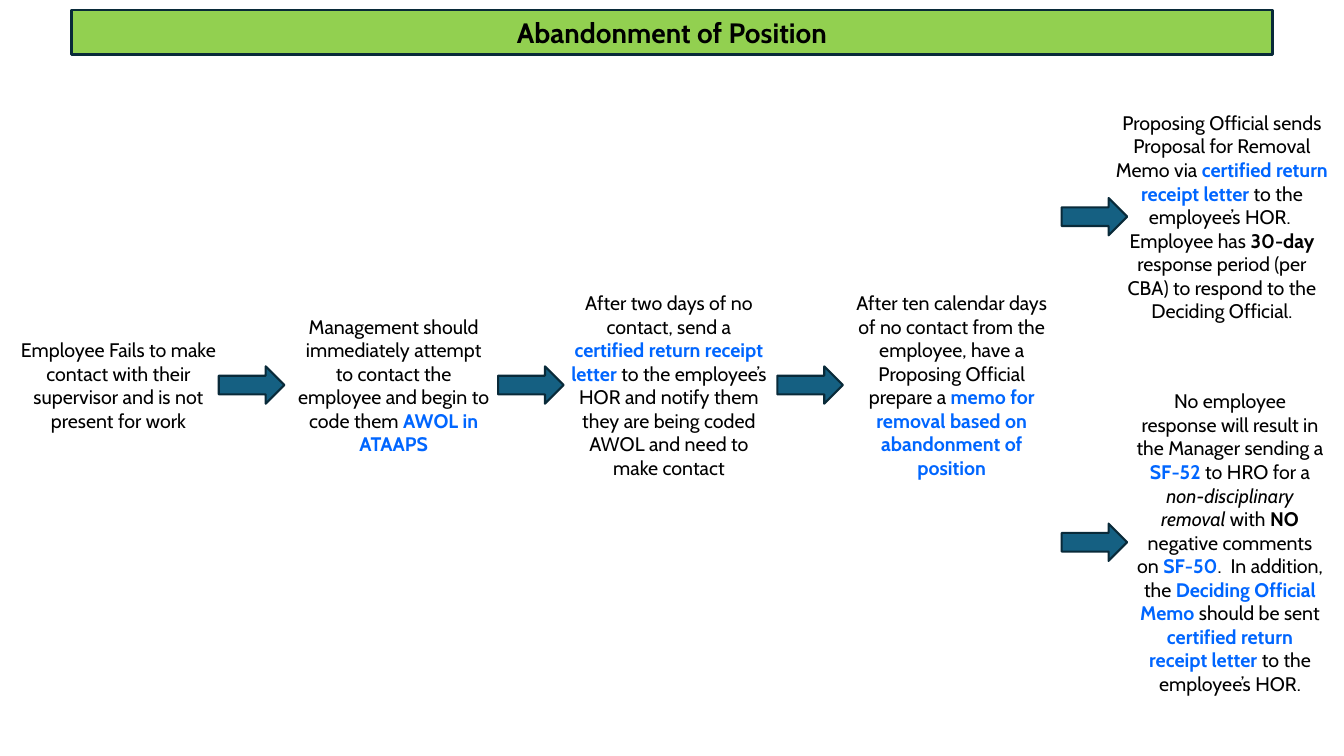
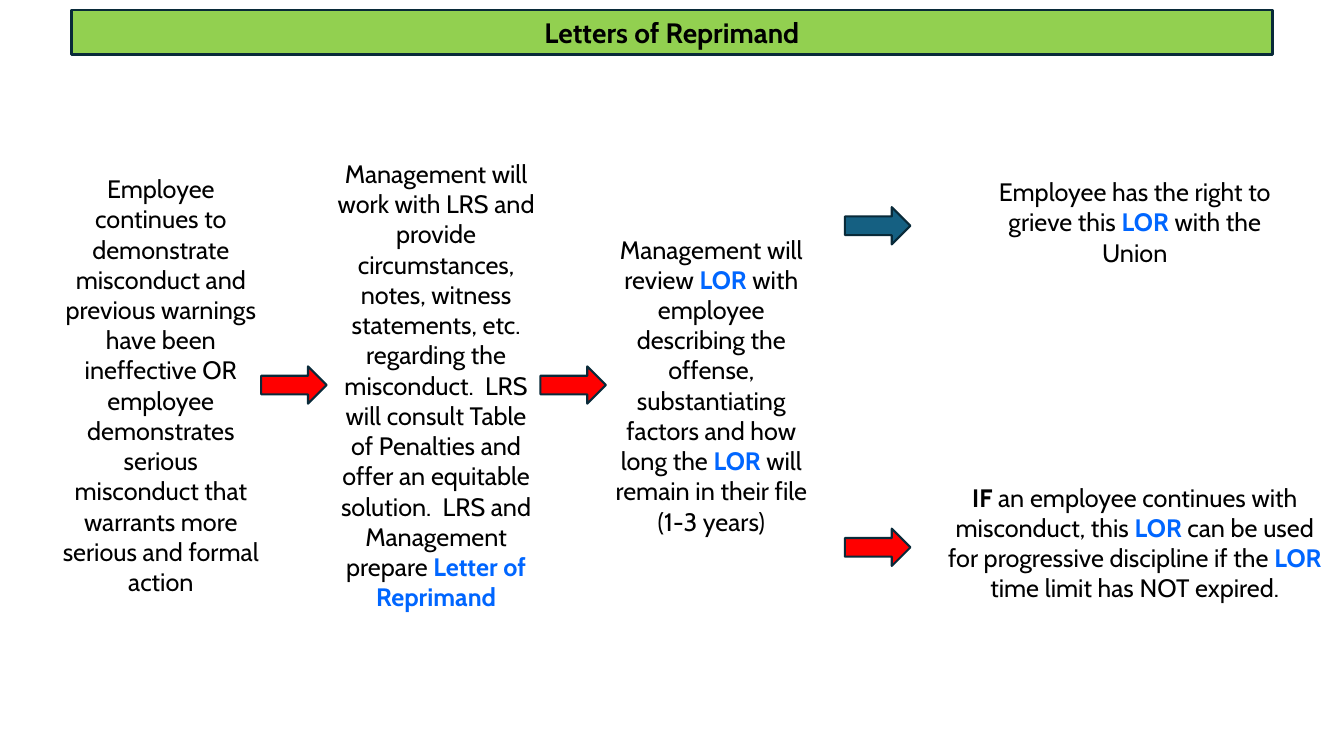
from pptx import Presentation
from pptx.dml.color import RGBColor
from pptx.enum.shapes import MSO_SHAPE
from pptx.enum.text import MSO_ANCHOR, MSO_AUTO_SIZE, PP_ALIGN
from pptx.util import Inches, Pt

RIGHT_ARROW = MSO_SHAPE.RIGHT_ARROW
MIDDLE = MSO_ANCHOR.MIDDLE
CENTER = PP_ALIGN.CENTER
NO_AUTOFIT = MSO_AUTO_SIZE.NONE

BLACK = RGBColor(0x00, 0x00, 0x00)
LINK_BLUE = RGBColor(0x00, 0x66, 0xFF)
GREEN = RGBColor(0x92, 0xD0, 0x50)
NAVY = RGBColor(0x09, 0x2A, 0x39)
TEAL = RGBColor(0x15, 0x60, 0x82)
RED = RGBColor(0xFF, 0x00, 0x00)

FONT = "Cabin"
SLIDE_W, SLIDE_H = 13.33, 7.5
BAND = (0.71, 0.1, 11.91, 0.44)
FLOW_Y = 3.82
STEP_PITCH = 2.73
ARROW_OFFSET, ARROW_PITCH = 2.07, 2.77
ARROW_W, ARROW_H = 0.65, 0.37

PLAIN, KEY, BOLD, ITALIC = "plain", "key", "bold", "italic"

SLIDES = [
    {
        "title": "Abandonment of Position",
        "size": 14,
        "left": 0.1,
        "arrow_color": TEAL,
        "steps": [
            (2.15, 1.04, [("Employee Fails to make contact with their supervisor and is not present for work", PLAIN)]),
            (2.15, 1.28, [
                ("Management should immediately attempt to contact the employee and begin to code them ", PLAIN),
                ("AWOL in ATAAPS", KEY),
            ]),
            (2.15, 1.75, [
                ("After two days of no contact, send a ", PLAIN),
                ("certified return receipt letter ", KEY),
                ("to the employee’s HOR and notify them they are being coded AWOL and need to make contact", PLAIN),
            ]),
            (2.3, 1.75, [
                ("After ten calendar days of no contact from the employee, have a Proposing Official prepare a ", PLAIN),
                ("memo for removal based on abandonment of position", KEY),
            ]),
        ],
        "branch_arrows": [(10.53, 2.15, TEAL), (10.53, 5.38, TEAL)],
        "branches": [
            (10.97, 2.15, 2.3, 2.22, [
                ("Proposing Official sends Proposal for Removal Memo via ", PLAIN),
                ("certified return receipt letter ", KEY),
                ("to the employee’s HOR.  Employee has ", PLAIN),
                ("30-day ", BOLD),
                ("response period (per CBA) to respond to the Deciding Official.", PLAIN),
            ]),
            (11.17, 5.38, 2.06, 2.93, [
                ("No employee response will result in the Manager sending a ", PLAIN),
                ("SF-52", KEY),
                (" to HRO for a ", PLAIN),
                ("non-disciplinary removal ", ITALIC),
                ("with ", PLAIN),
                ("NO", BOLD),
                (" negative comments on ", PLAIN),
                ("SF-50", KEY),
                (".  In addition, the ", PLAIN),
                ("Deciding Official Memo ", KEY),
                ("should be sent ", PLAIN),
                ("certified return receipt letter ", KEY),
                ("to the employee’s HOR.", PLAIN),
            ]),
        ],
    },
    {
        "title": "Letters of Reprimand",
        "size": 18,
        "left": 0.52,
        "arrow_color": RED,
        "steps": [
            (2.15, 4.34, [
                ("Employee continues to demonstrate misconduct and previous warnings have been ineffective OR "
                 "employee demonstrates serious misconduct that warrants more serious and formal action", PLAIN),
            ]),
            (2.15, 4.64, [
                ("Management will work with LRS and provide circumstances, notes, witness statements, etc. "
                 "regarding the misconduct.  LRS will consult Table of Penalties and offer an equitable "
                 "solution.  LRS and Management prepare ", PLAIN),
                ("Letter of Reprimand", KEY),
            ]),
            (2.15, 3.13, [
                ("Management will review ", PLAIN),
                ("LOR", KEY),
                (" with employee describing the offense, substantiating factors and how long the ", PLAIN),
                ("LOR", KEY),
                (" will remain in their file (1-3 years)", PLAIN),
            ]),
        ],
        "branch_arrows": [(8.38, 2.24, TEAL), (8.38, 5.43, RED)],
        "branches": [
            (9.62, 2.2, 3.27, 1.01, [
                ("Employee has the right to grieve this ", PLAIN),
                ("LOR", KEY),
                (" with the Union", PLAIN),
            ]),
            (9.27, 5.38, 3.97, 1.31, [
                ("IF", BOLD),
                (" an employee continues with misconduct, this ", PLAIN),
                ("LOR", KEY),
                (" can be used for progressive discipline if the ", PLAIN),
                ("LOR", KEY),
                (" time limit has NOT expired.", PLAIN),
            ]),
        ],
    },
]


def place(shape, left, top, width, height):
    shape.left, shape.top = Inches(left), Inches(top)
    shape.width, shape.height = Inches(width), Inches(height)


def paint(shape, fill, line_width):
    shape.fill.solid()
    shape.fill.fore_color.rgb = fill
    shape.line.color.rgb = NAVY
    shape.line.width = Pt(line_width)


def style_paragraph(para, size):
    para.alignment = CENTER
    para.font.name = FONT
    para.font.size = Pt(size)
    para.font.color.rgb = BLACK


def add_title(page, text):
    title = page.shapes.title
    place(title, *BAND)
    paint(title, GREEN, 2)
    frame = title.text_frame
    frame.text = text
    frame.auto_size = NO_AUTOFIT
    frame.vertical_anchor = MIDDLE
    para = frame.paragraphs[0]
    style_paragraph(para, 20)
    para.font.bold = True


def add_text(page, left, center_y, width, height, spans, size):
    box = page.shapes.add_textbox(
        Inches(left), Inches(center_y - height / 2), Inches(width), Inches(height))
    frame = box.text_frame
    frame.word_wrap = True
    frame.vertical_anchor = MIDDLE
    para = frame.paragraphs[0]
    style_paragraph(para, size)
    for text, style in spans:
        span = para.add_run()
        span.text = text
        if style in (KEY, BOLD):
            span.font.bold = True
        if style == KEY:
            span.font.color.rgb = LINK_BLUE
        if style == ITALIC:
            span.font.italic = True


def add_arrow(page, left, center_y, color):
    arrow = page.shapes.add_shape(
        RIGHT_ARROW, Inches(left), Inches(center_y - ARROW_H / 2), Inches(ARROW_W), Inches(ARROW_H))
    arrow.shadow.inherit = False
    paint(arrow, color, 1.5)


def build_slide(deck, content):
    page = deck.slides.add_slide(deck.slide_layouts[5])
    add_title(page, content["title"])
    for index, (width, height, spans) in enumerate(content["steps"]):
        if index:
            arrow_left = content["left"] + ARROW_OFFSET + (index - 1) * ARROW_PITCH
            add_arrow(page, arrow_left, FLOW_Y, content["arrow_color"])
        step_left = content["left"] + index * STEP_PITCH
        add_text(page, step_left, FLOW_Y, width, height, spans, content["size"])
    for arrow in content["branch_arrows"]:
        add_arrow(page, *arrow)
    for branch in content["branches"]:
        add_text(page, *branch, content["size"])


def main():
    deck = Presentation()
    deck.slide_width, deck.slide_height = Inches(SLIDE_W), Inches(SLIDE_H)
    for content in SLIDES:
        build_slide(deck, content)
    deck.save("out.pptx")


if __name__ == "__main__":
    main()
